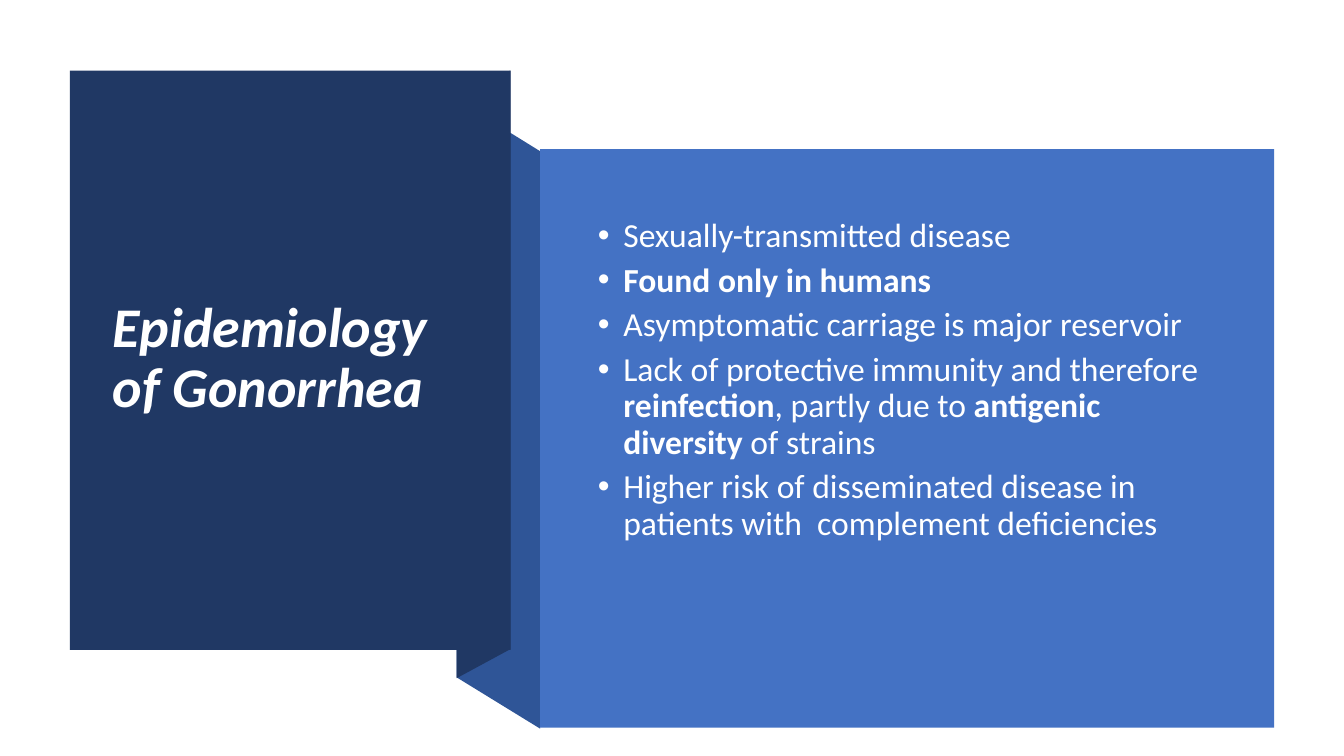
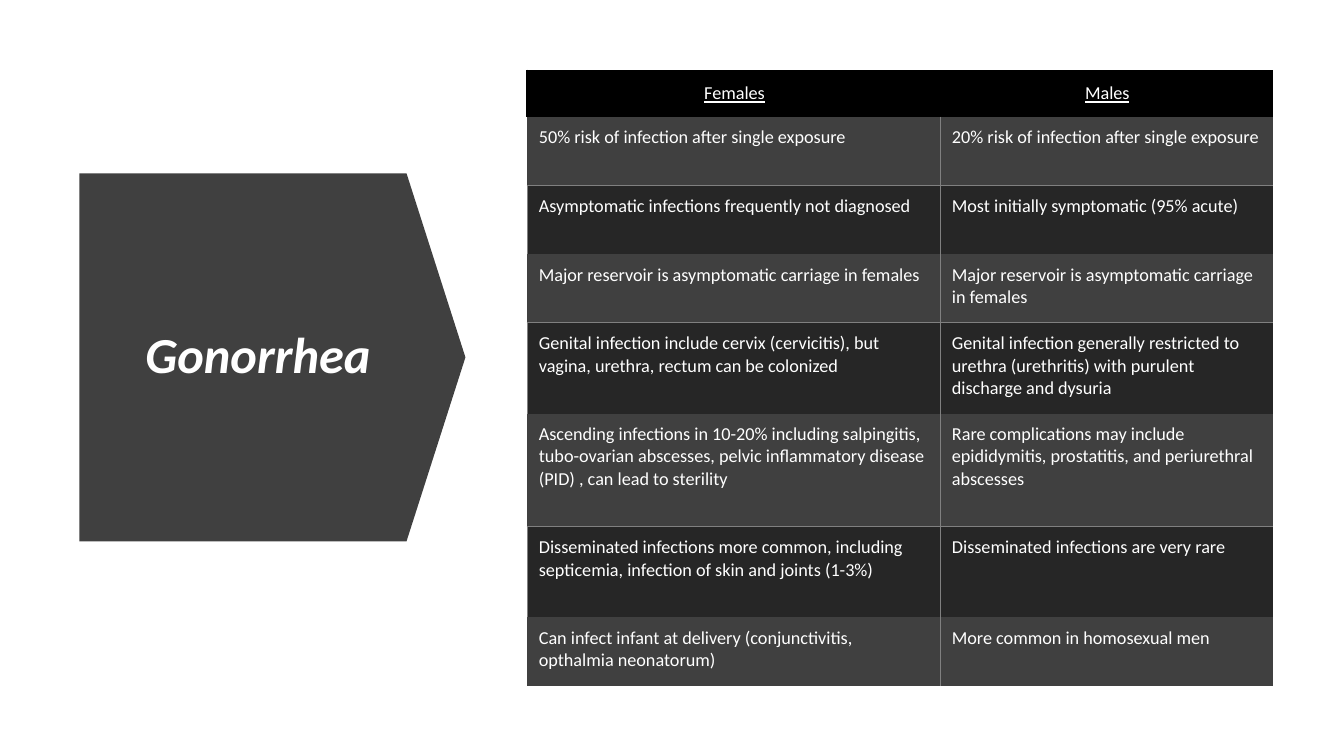
import dataclasses

import lxml.etree
import pptx
import pptx.dml.color
import pptx.enum.shapes
import pptx.enum.text
import pptx.oxml.ns
import pptx.util

Cm = pptx.util.Cm
Pt = pptx.util.Pt
RGBColor = pptx.dml.color.RGBColor
ShapeType = pptx.enum.shapes.MSO_SHAPE
Align = pptx.enum.text.PP_ALIGN
Anchor = pptx.enum.text.MSO_ANCHOR
qn = pptx.oxml.ns.qn


@dataclasses.dataclass(frozen=True)
class Theme:
    font: str = "Calibri"
    white: str = "FFFFFF"
    navy: str = "203864"
    fold_blue: str = "2F5597"
    panel_blue: str = "4472C4"
    black: str = "000000"
    charcoal: str = "262626"
    dark_gray: str = "404040"
    line_gray: str = "808080"
    large_title: float = 40
    small_title: float = 36
    body: float = 24
    table: float = 13
    line_spacing: float = 0.9
    space_after: float = 6
    grid_line: float = 0.5
    header_line: float = 1.5


THEME = Theme()

EPIDEMIOLOGY = [
    [("Sexually-transmitted disease", False)],
    [("Found only in humans", True)],
    [("Asymptomatic carriage is major reservoir", False)],
    [
        ("Lack of protective immunity and therefore ", False),
        ("reinfection", True),
        (", partly due to ", False),
        ("antigenic diversity", True),
        (" of strains", False),
    ],
    [("Higher risk of disseminated disease in patients with  complement deficiencies", False)],
]

COLUMN_WIDTHS = [10.41, 8.38]
# Each row: height in cm, text for females, text for males
COMPARISON = [
    (1.16, "Females", "Males"),
    (1.73, "50% risk of infection after single exposure",
     "20% risk of infection after single exposure"),
    (1.73, "Asymptomatic infections frequently not diagnosed",
     "Most initially symptomatic (95% acute)"),
    (1.73, "Major reservoir is asymptomatic carriage in females",
     "Major reservoir is asymptomatic carriage in females"),
    (2.29, "Genital infection include cervix (cervicitis), but vagina, urethra, "
           "rectum can be colonized",
     "Genital infection generally restricted to urethra (urethritis) with "
     "purulent discharge and dysuria"),
    (2.85, "Ascending infections in 10-20% including salpingitis, tubo-ovarian "
           "abscesses, pelvic inflammatory disease (PID) , can lead to sterility",
     "Rare complications may include epididymitis, prostatitis, and "
     "periurethral abscesses"),
    (2.29, "Disseminated infections more common, including septicemia, "
           "infection of skin and joints (1-3%)",
     "Disseminated infections are very rare"),
    (1.73, "Can infect infant at delivery (conjunctivitis, opthalmia neonatorum)",
     "More common in homosexual men"),
]


def add_run(paragraph, text, size, bold=False, italic=False, underline=False):
    run = paragraph.add_run()
    run.text = text
    font = run.font
    font.name = THEME.font
    font.size = Pt(size)
    font.bold = bold
    font.italic = italic
    font.underline = underline
    font.color.rgb = RGBColor.from_string(THEME.white)


def set_spacing(paragraph):
    paragraph.line_spacing = THEME.line_spacing
    paragraph.space_before = Pt(0)
    paragraph.space_after = Pt(THEME.space_after)


def paint(shape, color):
    """Give a shape a flat fill without outline or shadow."""
    shape.shadow.inherit = False
    shape.fill.solid()
    shape.fill.fore_color.rgb = RGBColor.from_string(color)
    shape.line.fill.background()


def add_block(slide, shape_type, box, color):
    shape = slide.shapes.add_shape(shape_type, *map(Cm, box))
    paint(shape, color)
    return shape


def add_polygon(slide, points, color):
    start, *others = [(Cm(x), Cm(y)) for x, y in points]
    builder = slide.shapes.build_freeform(*start)
    builder.add_line_segments(others, close=True)
    paint(builder.convert_to_shape(), color)


def set_title(slide, text, box, size, alignment):
    """Format the title placeholder and bring it in front of the shapes."""
    title = slide.shapes.title
    title.left, title.top, title.width, title.height = map(Cm, box)
    title.element.getparent().append(title.element)
    frame = title.text_frame
    frame.word_wrap = True
    frame.auto_size = pptx.enum.text.MSO_AUTO_SIZE.NONE
    frame.vertical_anchor = Anchor.MIDDLE
    paragraph = frame.paragraphs[0]
    paragraph.alignment = alignment
    set_spacing(paragraph)
    add_run(paragraph, text, size, bold=True, italic=True)


def add_bullet_mark(paragraph):
    properties = paragraph._p.get_or_add_pPr()
    properties.set("marL", str(Cm(0.96)))
    properties.set("indent", str(-Cm(0.64)))
    lxml.etree.SubElement(properties, qn("a:buFont"), typeface="Arial")
    lxml.etree.SubElement(properties, qn("a:buChar"), char="•")


def add_bullets(slide, items, box):
    frame = slide.shapes.add_textbox(*map(Cm, box)).text_frame
    frame.word_wrap = True
    for index, pieces in enumerate(items):
        paragraph = frame.add_paragraph() if index else frame.paragraphs[0]
        set_spacing(paragraph)
        add_bullet_mark(paragraph)
        for text, bold in pieces:
            add_run(paragraph, text, THEME.body, bold=bold)


def set_borders(cell, sides, color, width):
    """Draw the given sides (letters of LRTB) and clear the others."""
    properties = cell._tc.get_or_add_tcPr()
    for position, side in enumerate("LRTB"):
        line = lxml.etree.Element(qn(f"a:ln{side}"))
        if side in sides:
            line.set("w", str(Pt(width)))
            fill = lxml.etree.SubElement(line, qn("a:solidFill"))
            lxml.etree.SubElement(fill, qn("a:srgbClr"), val=color)
        else:
            line.set("w", "0")
            lxml.etree.SubElement(line, qn("a:noFill"))
        properties.insert(position, line)


def format_cell(cell, row, column, last_row):
    header = row == 0
    dark = row % 2 == 0
    cell.margin_left = Cm(0.3)
    cell.margin_right = cell.margin_top = cell.margin_bottom = Cm(0.25)
    cell.vertical_anchor = Anchor.MIDDLE if header else Anchor.TOP
    color = THEME.black if header else THEME.charcoal if dark else THEME.dark_gray
    cell.fill.solid()
    cell.fill.fore_color.rgb = RGBColor.from_string(color)
    if header:
        sides = "T" if column else "LT"
        set_borders(cell, sides, THEME.black, THEME.header_line)
        return
    sides = "L" if column else "R"
    if dark:
        sides += "LT"
    elif row != last_row:
        sides += "B"
    set_borders(cell, sides, THEME.line_gray, THEME.grid_line)


def add_comparison_table(slide, rows, left, top):
    heights = [row[0] for row in rows]
    table = slide.shapes.add_table(
        len(rows), len(COLUMN_WIDTHS), Cm(left), Cm(top),
        Cm(sum(COLUMN_WIDTHS)), Cm(sum(heights)),
    ).table
    table.first_row = table.horz_banding = False
    for column, width in zip(table.columns, COLUMN_WIDTHS):
        column.width = Cm(width)
    for row_index, (height, *texts) in enumerate(rows):
        table.rows[row_index].height = Cm(height)
        for column_index, text in enumerate(texts):
            cell = table.cell(row_index, column_index)
            header = row_index == 0
            format_cell(cell, row_index, column_index, len(rows) - 1)
            paragraph = cell.text_frame.paragraphs[0]
            paragraph.alignment = Align.CENTER if header else Align.LEFT
            add_run(paragraph, text, THEME.table, underline=header)


def add_title_slide(presentation):
    return presentation.slides.add_slide(
        presentation.slide_layouts.get_by_name("Title Only"))


def build_epidemiology(presentation):
    slide = add_title_slide(presentation)
    add_polygon(slide, [(13.61, 18.36), (11.51, 17.07), (11.51, 2.51), (13.61, 3.81)],
                THEME.fold_blue)
    add_polygon(slide, [(12.86, 16.36), (11.51, 17.09), (11.51, 2.49), (12.86, 1.78)],
                THEME.navy)
    add_block(slide, ShapeType.RECTANGLE, (1.76, 1.78, 11.11, 14.6), THEME.navy)
    add_block(slide, ShapeType.RECTANGLE, (13.61, 3.76, 18.5, 14.58), THEME.panel_blue)
    add_bullets(slide, EPIDEMIOLOGY, (14.5, 5.38, 16.54, 11.4))
    set_title(slide, "Epidemiology of Gonorrhea", (2.59, 2.72, 9.42, 12.67),
              THEME.large_title, Align.LEFT)


def build_comparison(presentation):
    slide = add_title_slide(presentation)
    arrow = add_block(slide, ShapeType.PENTAGON, (2, 4.37, 9.73, 9.27), THEME.dark_gray)
    arrow.adjustments[0] = 0.16
    add_comparison_table(slide, COMPARISON, 13.28, 1.78)
    set_title(slide, "Gonorrhea", (2.84, 5.46, 7.32, 7.09),
              THEME.small_title, Align.CENTER)


def main():
    presentation = pptx.Presentation()
    presentation.slide_width = Cm(33.87)
    presentation.slide_height = Cm(19.05)
    build_epidemiology(presentation)
    build_comparison(presentation)
    presentation.save("out.pptx")


if __name__ == "__main__":
    main()
